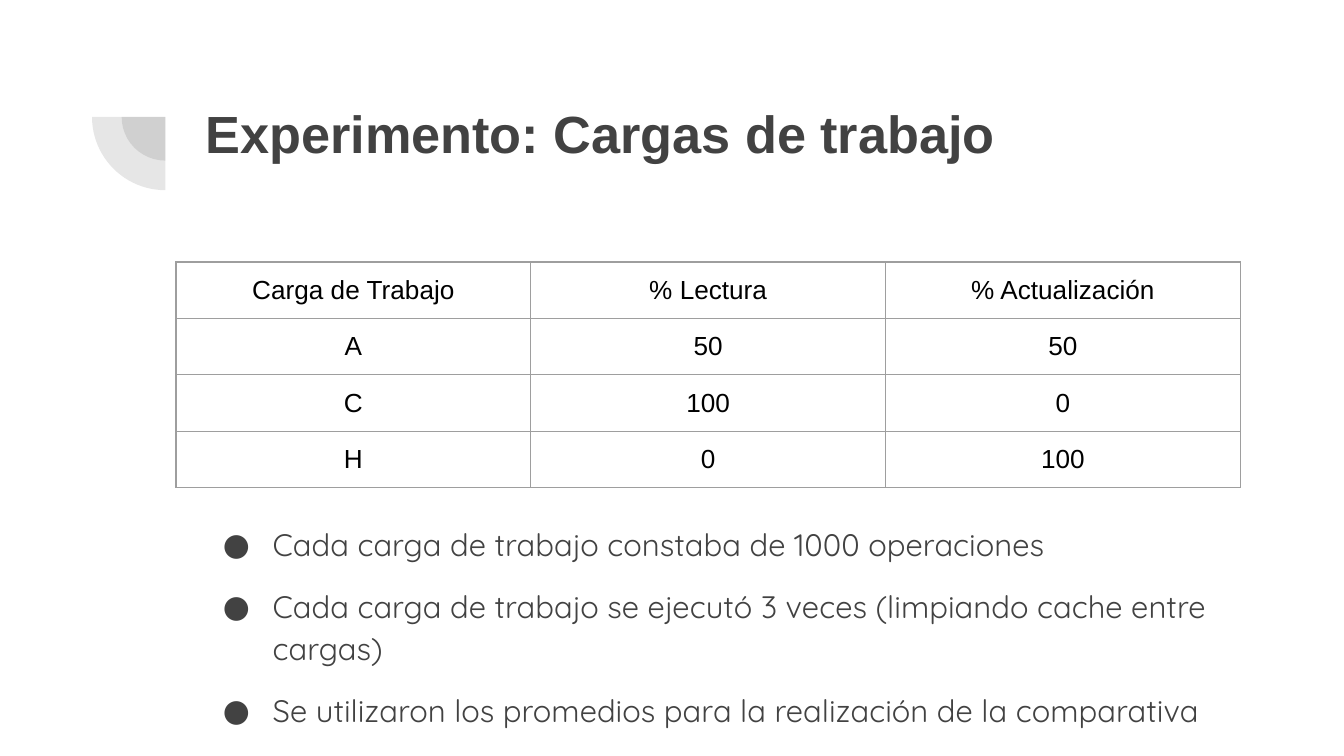
from lxml.etree import SubElement
from pptx import Presentation
from pptx.dml.color import RGBColor
from pptx.enum.shapes import MSO_SHAPE as Shape
from pptx.enum.text import MSO_ANCHOR as Anchor, MSO_AUTO_SIZE as AutoSize, PP_ALIGN as Align
from pptx.oxml.ns import qn
from pptx.util import Inches, Pt

DARK = RGBColor(0x42, 0x42, 0x42)
BLACK = RGBColor(0, 0, 0)
BORDER = RGBColor(0x9E, 0x9E, 0x9E)

WORKLOADS = [
    ("Carga de Trabajo", "% Lectura", "% Actualización"),
    ("A", "50", "50"),
    ("C", "100", "0"),
    ("H", "0", "100"),
]
NOTES = [
    "Cada carga de trabajo constaba de 1000 operaciones",
    "Cada carga de trabajo se ejecutó 3 veces (limpiando cache entre cargas)",
    "Se utilizaron los promedios para la realización de la comparativa",
]


def set_font(para, name, size, color, bold=False):
    font = para.font
    font.name, font.size, font.bold = name, Pt(size), bold
    font.color.rgb = color


def set_frame(frame):
    frame.word_wrap = True
    frame.auto_size = AutoSize.NONE
    frame.vertical_anchor = Anchor.TOP
    frame.margin_left = frame.margin_right = Inches(0.1)
    frame.margin_top = frame.margin_bottom = Inches(0.1)


def add_quarter(page, center_x, center_y, diameter):
    """Add a translucent quarter disc that fills the lower left quadrant."""
    quarter = page.shapes.add_shape(
        Shape.PIE, Inches(center_x - diameter / 2), Inches(center_y - diameter / 2),
        Inches(diameter), Inches(diameter))
    # Angles of 180 and 270 degrees, in 60000ths over 100000
    quarter.adjustments[0] = 108
    quarter.adjustments[1] = 162
    quarter.rotation = 270
    quarter.shadow.inherit = False
    quarter.line.fill.background()
    quarter.fill.solid()
    quarter.fill.fore_color.rgb = DARK
    color = quarter.fill._xPr.find(qn("a:solidFill"))[0]
    SubElement(color, qn("a:alpha"), val="13000")


def set_title(page, text):
    title = page.shapes.title
    title.left, title.top = Inches(1.43), Inches(0.65)
    title.width, title.height = Inches(7.69), Inches(1.09)
    set_frame(title.text_frame)
    title.text_frame.text = text
    para = title.text_frame.paragraphs[0]
    para.alignment = Align.LEFT
    para.line_spacing = 1.0
    set_font(para, "Arial", 28, DARK, bold=True)


def set_borders(cell):
    props = cell._tc.get_or_add_tcPr()
    for position, side in enumerate(("lnL", "lnR", "lnT", "lnB")):
        line = SubElement(props, qn(f"a:{side}"), w=str(Pt(0.75)))
        fill = SubElement(line, qn("a:solidFill"))
        SubElement(fill, qn("a:srgbClr"), val=str(BORDER))
        props.insert(position, line)  # borders come before the fill


def add_workload_table(page, rows):
    column_width, row_height = 2.64, 0.42
    table = page.shapes.add_table(
        len(rows), len(rows[0]), Inches(1.31), Inches(1.95),
        Inches(column_width * len(rows[0])), Inches(row_height * len(rows))).table
    table.first_row = table.horz_banding = False
    for row_index, row in enumerate(rows):
        for column_index, text in enumerate(row):
            cell = table.cell(row_index, column_index)
            cell.text = text
            cell.margin_left = cell.margin_right = Inches(0.1)
            cell.margin_top = cell.margin_bottom = Inches(0.1)
            cell.fill.background()
            set_borders(cell)
            para = cell.text_frame.paragraphs[0]
            para.alignment = Align.CENTER
            set_font(para, "Arial", 14, BLACK)


def set_bullet(para):
    props = para._p.get_or_add_pPr()
    props.set("marL", str(Inches(0.5)))
    props.set("indent", str(Inches(-0.37)))
    color = SubElement(props, qn("a:buClr"))
    SubElement(color, qn("a:srgbClr"), val=str(DARK))
    SubElement(props, qn("a:buFont"), typeface="Quicksand")
    SubElement(props, qn("a:buChar"), char="●")


def add_notes(page, notes):
    box = page.shapes.add_textbox(Inches(1.43), Inches(3.77), Inches(7.69), Inches(1.73))
    frame = box.text_frame
    set_frame(frame)
    for index, text in enumerate(notes):
        para = frame.add_paragraph() if index else frame.paragraphs[0]
        para.text = text
        para.line_spacing = 1.15
        para.space_before = Pt(10 if index else 0)
        set_bullet(para)
        set_font(para, "Quicksand", 16.65, DARK)
    para.space_after = Pt(10)


def main():
    deck = Presentation()
    deck.slide_width = Inches(10)
    deck.slide_height = deck.slide_width * 9 // 16
    page = deck.slides.add_slide(deck.slide_layouts[5])

    # Corner ornament
    for diameter in (0.65, 1.09):
        add_quarter(page, 1.23, 0.87, diameter)

    # Content
    set_title(page, "Experimento: Cargas de trabajo")
    add_notes(page, NOTES)
    add_workload_table(page, WORKLOADS)
    deck.save("out.pptx")


if __name__ == "__main__":
    main()
